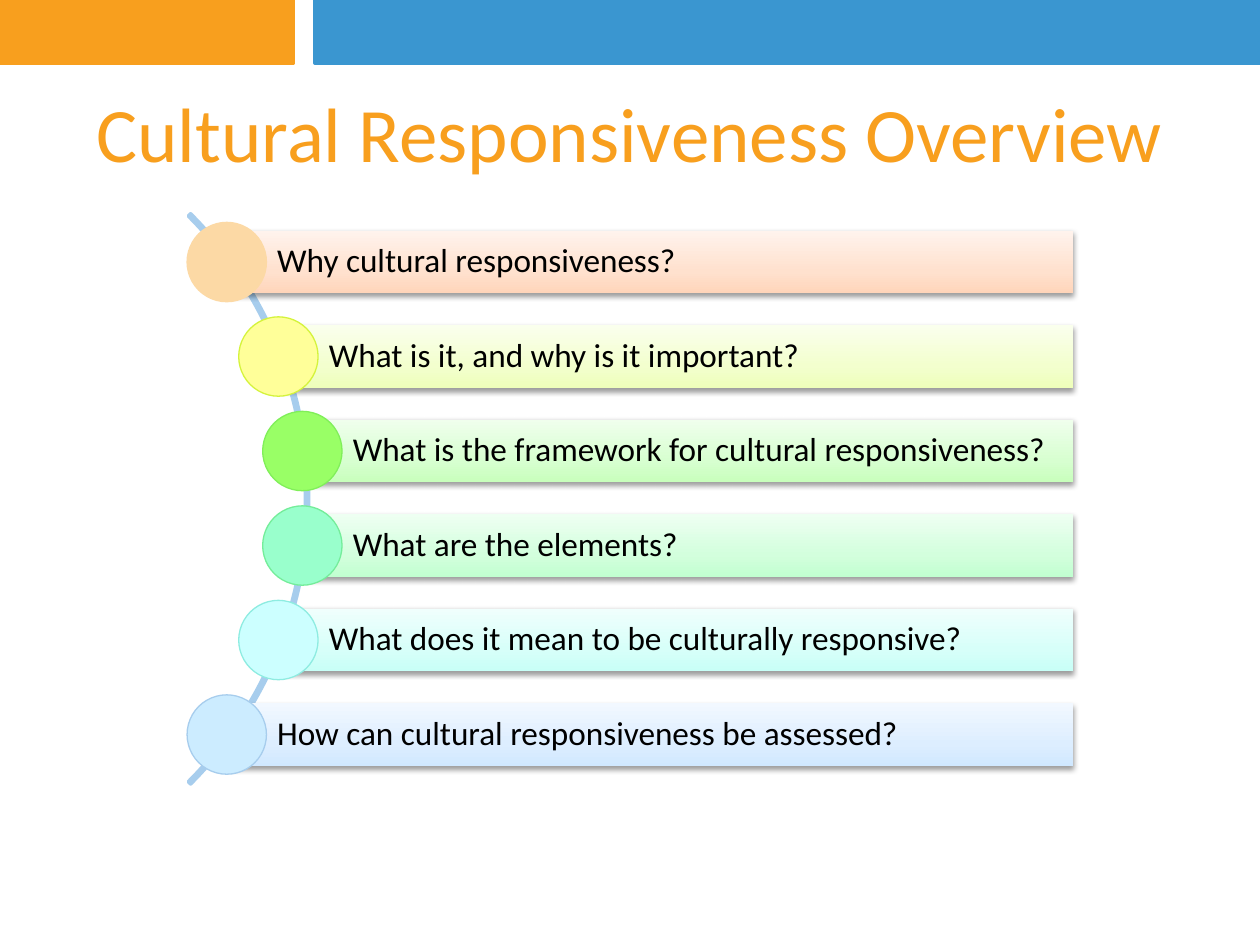
from copy import deepcopy

from lxml.etree import SubElement
from pptx import Presentation
from pptx.dml.color import RGBColor
from pptx.enum.shapes import MSO_SHAPE as Shape
from pptx.enum.text import MSO_ANCHOR as Anchor, PP_ALIGN as Align
from pptx.oxml.ns import qn
from pptx.util import Inches, Pt

ORANGE, BLUE, ARC_BLUE = "F89F1E", "3A96D0", "A7CDED"

# Question, indent, circle fill, circle line, bar gradient from bottom to top
QUESTIONS = [
    ("Why cultural responsiveness?", 0, "FCD9A5", "FCD9A5",
     ("FFD5BA", "FFE1CE", "FFF3ED")),
    ("What is it, and why is it important?", 0.41, "FFFF99", "D5F33C",
     ("EEFFBA", "F3FFCE", "FAFFED")),
    ("What is the framework for cultural responsiveness?", 0.6, "99FF66", "80EF59",
     ("C8FFBC", "D7FFD0", "F0FFED")),
    ("What are the elements?", 0.6, "99FFCC", "74ED9A",
     ("C1FFD0", "D3FFDD", "EEFFF2")),
    ("What does it mean to be culturally responsive?", 0.41, "CCFFFF", "8EECE1",
     ("C8FFF7", "D7FFF9", "F0FFFD")),
    ("How can cultural responsiveness be assessed?", 0, "CCECFF", "A7CDED",
     ("D0E8FF", "DDEEFF", "F2F8FF")),
]
BAR_LEFT, BAR_RIGHT, BAR_TOP, BAR_HEIGHT = 1.8, 8.52, 1.83, 0.5
ROW_STEP, CIRCLE_SIZE = 0.75, 0.63


def rgb(value):
    return RGBColor.from_string(value)


class SlideBuilder:
    font = "Calibri"

    def __init__(self, slide):
        self.slide = slide

    def style(self, paragraph, size, color, align):
        paragraph.alignment = align
        paragraph.font.name = self.font
        paragraph.font.size = Pt(size)
        paragraph.font.color.rgb = rgb(color)

    def title(self, text, left, top, width, height):
        title = self.slide.shapes.title
        title.left, title.top = Inches(left), Inches(top)
        title.width, title.height = Inches(width), Inches(height)
        title.text_frame.text = text
        title.text_frame.vertical_anchor = Anchor.MIDDLE
        self.style(title.text_frame.paragraphs[0], 44, ORANGE, Align.CENTER)

    def shape(self, kind, left, top, width, height, fill=None, line=None, weight=2):
        shape = self.slide.shapes.add_shape(
            kind, Inches(left), Inches(top), Inches(width), Inches(height))
        shape.shadow.inherit = False
        if fill:
            shape.fill.solid()
            shape.fill.fore_color.rgb = rgb(fill)
        else:
            shape.fill.background()
        if line:
            shape.line.color.rgb = rgb(line)
            shape.line.width = Pt(weight)
        else:
            shape.line.fill.background()
        return shape

    def gradient(self, shape, colors):
        shape.fill.gradient()
        shape.fill.gradient_angle = 90
        stop_list = shape._element.spPr.find(qn("a:gradFill")).find(qn("a:gsLst"))
        stop_list.append(deepcopy(stop_list[-1]))
        for stop, position, color in zip(shape.fill.gradient_stops, (0, 0.35, 1), colors):
            stop.position = position
            stop.color.rgb = rgb(color)

    def drop_shadow(self, shape):
        effects = shape._element.spPr.find(qn("a:effectLst"))
        shadow = SubElement(effects, qn("a:outerShdw"), blurRad=str(Pt(3.1)),
                            dist=str(Pt(1.6)), dir="5400000", rotWithShape="0")
        color = SubElement(shadow, qn("a:srgbClr"), val="000000")
        SubElement(color, qn("a:alpha"), val="38000")

    def bar(self, text, left, top, width, height, colors):
        bar = self.shape(Shape.RECTANGLE, left, top, width, height)
        self.gradient(bar, colors)
        self.drop_shadow(bar)
        frame = bar.text_frame
        frame.word_wrap = True
        frame.vertical_anchor = Anchor.MIDDLE
        frame.margin_left = Inches(0.4)
        frame.margin_right = frame.margin_top = frame.margin_bottom = Inches(0.05)
        frame.text = text
        question = frame.paragraphs[0]
        question.line_spacing = 0.9
        self.style(question, 19, "000000", Align.LEFT)


def main():
    deck = Presentation()
    deck.slide_width, deck.slide_height = Inches(10), Inches(7.5)
    builder = SlideBuilder(deck.slides.add_slide(deck.slide_layouts[5]))

    # Header bands and title
    builder.shape(Shape.RECTANGLE, 0, 0, 2.33, 0.5, ORANGE, ORANGE)
    builder.shape(Shape.RECTANGLE, 2.5, 0, 7.5, 0.5, BLUE, BLUE)
    builder.title("Cultural Responsiveness Overview", 0.5, 0.42, 9, 1.25)

    # Arc behind the circles, from 315 to 45 degrees
    arc = builder.shape(Shape.BLOCK_ARC, -3.95, 0.76, 6.4, 6.4, line=ARC_BLUE)
    for index, value in enumerate((189, 27, 0.004)):
        arc.adjustments[index] = value

    # Question bars, each with a circle centred on its left edge
    for row, (question, indent, fill, line, colors) in enumerate(QUESTIONS):
        left, top = BAR_LEFT + indent, BAR_TOP + row * ROW_STEP
        builder.bar(question, left, top, BAR_RIGHT - left, BAR_HEIGHT, colors)
        builder.shape(Shape.OVAL, left - CIRCLE_SIZE / 2,
                      top + (BAR_HEIGHT - CIRCLE_SIZE) / 2,
                      CIRCLE_SIZE, CIRCLE_SIZE, fill, line, 0.75)

    deck.save("out.pptx")


if __name__ == "__main__":
    main()
